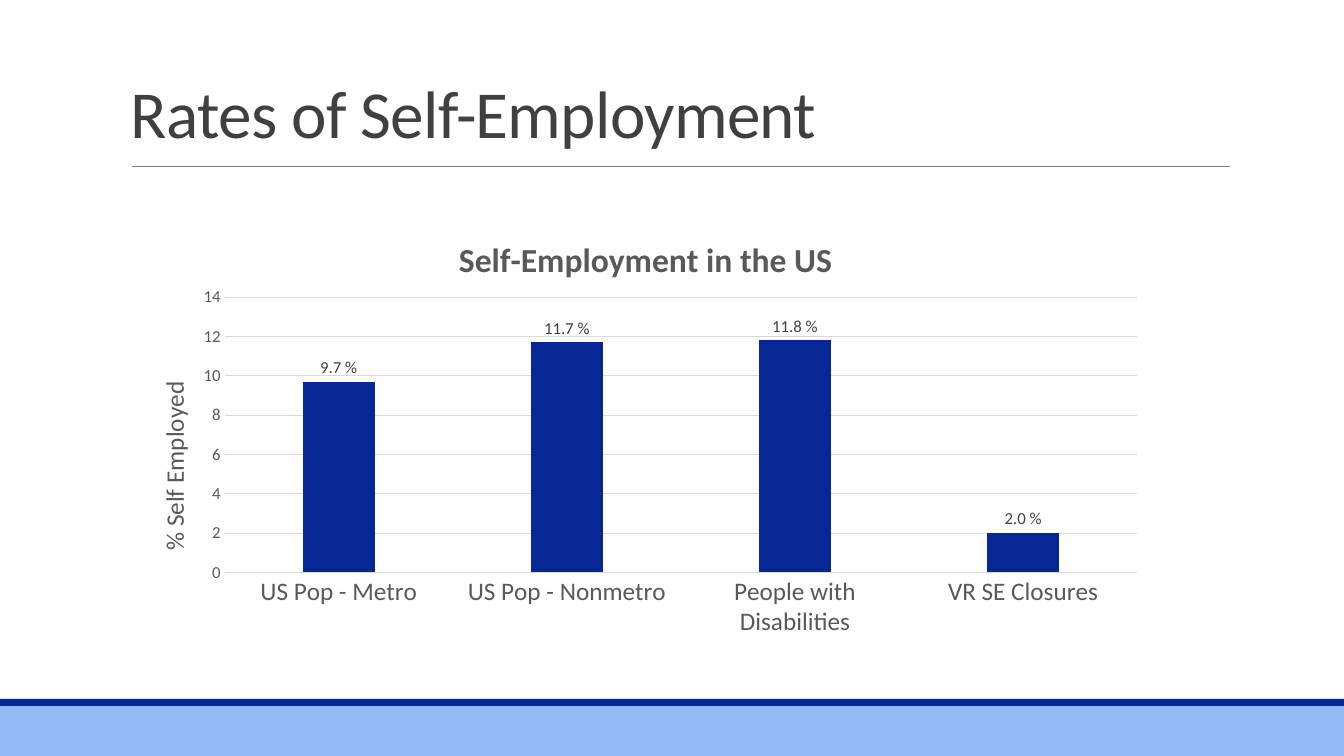
from lxml import etree
from pptx import Presentation
from pptx.chart.data import CategoryChartData
from pptx.dml.color import RGBColor
from pptx.enum.chart import XL_CHART_TYPE, XL_LABEL_POSITION, XL_TICK_MARK
from pptx.enum.shapes import MSO_CONNECTOR, MSO_SHAPE
from pptx.enum.text import MSO_ANCHOR
from pptx.oxml.ns import qn
from pptx.util import Emu, Pt

COLUMNS = XL_CHART_TYPE.COLUMN_CLUSTERED
OUTSIDE_END = XL_LABEL_POSITION.OUTSIDE_END
NO_TICK = XL_TICK_MARK.NONE
STRAIGHT = MSO_CONNECTOR.STRAIGHT
RECTANGLE = MSO_SHAPE.RECTANGLE
BOTTOM = MSO_ANCHOR.BOTTOM

NAVY = RGBColor(0x07, 0x27, 0x94)
SKY = RGBColor(0x93, 0xBA, 0xF5)
INK = RGBColor(0x40, 0x40, 0x40)
TEXT_GRAY = RGBColor(0x59, 0x59, 0x59)
RULE_GRAY = RGBColor(0x80, 0x80, 0x80)
GRID_GRAY = RGBColor(0xD9, 0xD9, 0xD9)

FONT = "Calibri"
PX_PER_INCH = 100.8
WIDTH, HEIGHT = 1344, 756

RATES = {
    "US Pop - Metro": 9.7,
    "US Pop - Nonmetro": 11.7,
    "People with Disabilities": 11.8,
    "VR SE Closures": 2.0,
}


def px(*lengths):
    return [Emu(round(length * 914400 / PX_PER_INCH)) for length in lengths]


def style_font(font, size, color, bold=False):
    font.name = FONT
    font.size = Pt(size)
    font.bold = bold
    font.color.rgb = color


def style_line(line, color, width):
    line.color.rgb = color
    line.width = Pt(width)


def add_band(page, left, top, width, height, color):
    band = page.shapes.add_shape(RECTANGLE, *px(left, top, width, height))
    band.shadow.inherit = False
    band.fill.solid()
    band.fill.fore_color.rgb = color
    band.line.fill.background()


def add_footer(page, left, top, width, height):
    stripe = 7
    add_band(page, left, top + stripe, width, height - stripe, SKY)
    add_band(page, left, top, width, stripe, NAVY)


def add_heading(page, left, top, width, height):
    # Rule under the title
    rule_left, rule_top = left + 11, top + height + 9
    rule = page.shapes.add_connector(
        STRAIGHT, *px(rule_left, rule_top, rule_left + 1098, rule_top))
    style_line(rule.line, RULE_GRAY, 0.5)
    etree.SubElement(rule.element.spPr, qn("a:effectLst"))

    # Title text
    box = page.shapes.add_textbox(*px(left, top, width, height))
    box.text_frame.word_wrap = True
    box.text_frame.vertical_anchor = BOTTOM
    para = box.text_frame.paragraphs[0]
    para.line_spacing = 0.85
    span = para.add_run()
    span.text = "Rates of Self-Employment"
    style_font(span.font, 48, INK)
    span.font.element.set("spc", "-50") if hasattr(span.font, "element") else \
        para.runs[0].text and box.element.find(".//" + qn("a:rPr")).set("spc", "-50")


def place_part(part, **fractions):
    """Pin a chart part at fractions of the chart's size."""
    layout = part.find(qn("c:layout"))
    if layout is None:
        layout = etree.Element(qn("c:layout"))
        text = part.find(qn("c:tx"))
        part.insert(0 if text is None else 1, layout)
    manual = etree.SubElement(layout, qn("c:manualLayout"))
    if "w" in fractions:
        etree.SubElement(manual, qn("c:layoutTarget")).set("val", "inner")
    for side in "xy":
        etree.SubElement(manual, qn(f"c:{side}Mode")).set("val", "edge")
    for side, fraction in fractions.items():
        etree.SubElement(manual, qn(f"c:{side}")).set("val", str(fraction))


def write_title(title, text, size, bold):
    para = title.text_frame.paragraphs[0]
    para.text = text
    style_font(para.font, size, TEXT_GRAY, bold)


def add_rates_chart(page, left, top, width, height):
    chart_data = CategoryChartData(number_format="0.0")
    chart_data.categories = list(RATES)
    chart_data.add_series("Series 1", list(RATES.values()))
    frame = page.shapes.add_chart(
        COLUMNS, *px(left, top, width, height), chart_data)
    chart = frame.chart
    chart.has_legend = False
    style_font(chart.font, 10, TEXT_GRAY)

    # Columns and their labels
    plot = chart.plots[0]
    plot.vary_by_categories = False
    plot.gap_width = 219
    plot.overlap = -27
    series = plot.series[0]
    series.format.fill.solid()
    series.format.fill.fore_color.rgb = NAVY
    labels = series.data_labels
    labels.show_value = True
    labels.position = OUTSIDE_END
    labels.number_format = '0.0" %"'
    labels.number_format_is_linked = False
    style_font(labels.font, 12, INK)

    # Axes
    categories, values = chart.category_axis, chart.value_axis
    for axis, size in ((categories, 18), (values, 12)):
        axis.major_tick_mark = NO_TICK
        axis.minor_tick_mark = NO_TICK
        style_font(axis.tick_labels.font, size, TEXT_GRAY)
    style_line(categories.format.line, GRID_GRAY, 0.75)
    values.format.line.fill.background()
    style_line(values.major_gridlines.format.line, GRID_GRAY, 0.75)
    values.minimum_scale, values.maximum_scale = 0, 14
    values.major_unit = 2
    values.tick_labels.number_format = "0"
    values.tick_labels.number_format_is_linked = False

    # Titles
    chart.has_title = True
    write_title(chart.chart_title, "Self-Employment in the US", 24, True)
    write_title(values.axis_title, "% Self Employed", 18, False)

    # Places of the parts within the chart
    root = chart.element
    axis_title = root.find(".//" + qn("c:valAx")).find(qn("c:title"))
    direction = axis_title.find(".//" + qn("a:bodyPr"))
    direction.set("rot", "-5400000")
    direction.set("vert", "horz")
    place_part(axis_title, x=0.03, y=0.39)
    place_part(root.find(qn("c:chart")).find(qn("c:title")), x=0.32, y=0.06)
    place_part(root.find(".//" + qn("c:plotArea")),
               x=0.1, y=0.21, w=0.88, h=0.62)


def main():
    deck = Presentation()
    deck.slide_width, deck.slide_height = px(WIDTH, HEIGHT)
    page = deck.slides.add_slide(deck.slide_layouts[6])
    add_footer(page, 0, 699, WIDTH, HEIGHT - 699)
    add_heading(page, 121, -3, 1109, 160)
    add_rates_chart(page, 121, 204, 1037, 444)
    deck.save("out.pptx")


if __name__ == "__main__":
    main()
